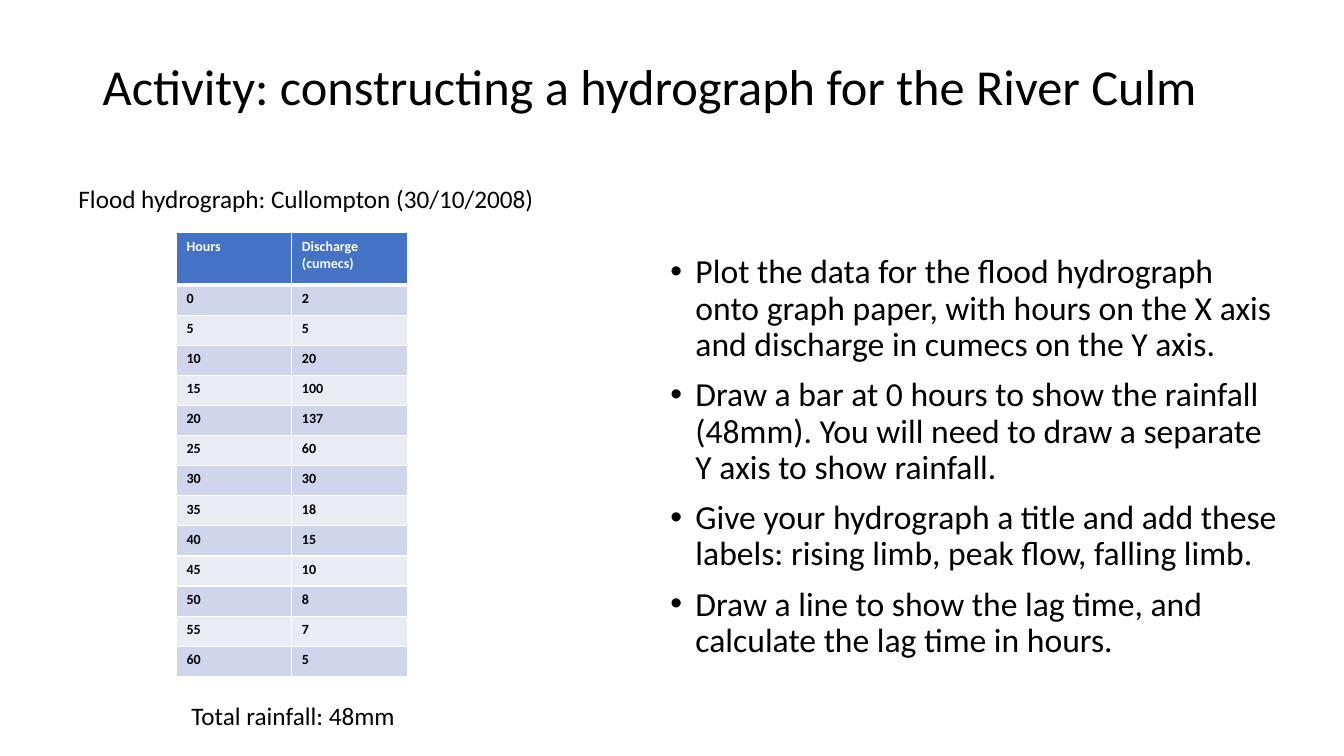
from typing import NamedTuple

from lxml.etree import SubElement
from pptx import Presentation
from pptx.dml.color import RGBColor
from pptx.enum.text import MSO_ANCHOR
from pptx.oxml.ns import qn
from pptx.util import Inches, Pt

FONT = "Calibri"
BLACK, WHITE = "000000", "FFFFFF"
HEADER_BLUE = "4472C4"
BANDS = ("CFD5EA", "E9EBF5")


class Box(NamedTuple):
    left: float
    top: float
    width: float
    height: float


class Reading(NamedTuple):
    hours: int
    discharge: int


DISCHARGES = (2, 5, 20, 100, 137, 60, 30, 18, 15, 10, 8, 7, 5)
READINGS = [Reading(5 * step, flow) for step, flow in enumerate(DISCHARGES)]
TASKS = [
    "Plot the data for the flood hydrograph onto graph paper, with hours on the X axis "
    "and discharge in cumecs on the Y axis.",
    "Draw a bar at 0 hours to show the rainfall (48mm). You will need to draw a separate "
    "Y axis to show rainfall.",
    "Give your hydrograph a title and add these labels: rising limb, peak flow, falling limb.",
    "Draw a line to show the lag time, and calculate the lag time in hours.",
]


def rgb(color: str) -> RGBColor:
    return RGBColor.from_string(color)


def place(box: Box) -> list:
    return [Inches(length) for length in box]


def write(frame, *lines: str, size: float, color: str = BLACK, bold: bool = False,
          bullet: bool = False, line_spacing: float = 1.0, space_before: float = 0) -> None:
    for index, line in enumerate(lines):
        paragraph = frame.add_paragraph() if index else frame.paragraphs[0]
        if bullet:
            properties = paragraph._p.get_or_add_pPr()
            properties.set("marL", str(Inches(0.25)))
            properties.set("indent", str(-Inches(0.25)))
            SubElement(properties, qn("a:buFont"), typeface="Arial")
            SubElement(properties, qn("a:buChar"), char="•")
        paragraph.line_spacing = line_spacing
        paragraph.space_before = Pt(space_before if index else 0)
        run = paragraph.add_run()
        run.text = line
        run.font.name, run.font.size, run.font.bold = FONT, Pt(size), bold
        run.font.color.rgb = rgb(color)


def add_text(slide, box: Box, *lines: str, wrap: bool = True,
             anchor: MSO_ANCHOR = MSO_ANCHOR.TOP, **text_format) -> None:
    frame = slide.shapes.add_textbox(*place(box)).text_frame
    frame.word_wrap = wrap
    frame.vertical_anchor = anchor
    write(frame, *lines, **text_format)


def add_borders(cell, top: float, bottom: float) -> None:
    properties = cell._tc.get_or_add_tcPr()
    for side, width in (("L", 1), ("R", 1), ("T", top), ("B", bottom)):
        line = SubElement(properties, qn(f"a:ln{side}"), w=str(Pt(width)))
        SubElement(SubElement(line, qn("a:solidFill")), qn("a:srgbClr"), val=WHITE)


def add_readings_table(slide, box: Box, header_height: float) -> None:
    rows = [("Hours", "Discharge (cumecs)"), *READINGS]
    table = slide.shapes.add_table(len(rows), 2, *place(box)).table
    reading_height = (box.height - header_height) / len(READINGS)
    for row_index, values in enumerate(rows):
        is_header = row_index == 0
        table.rows[row_index].height = Inches(header_height if is_header else reading_height)
        for column_index, value in enumerate(values):
            cell = table.cell(row_index, column_index)
            add_borders(cell, top=3 if row_index == 1 else 1, bottom=3 if is_header else 1)
            cell.fill.solid()
            cell.fill.fore_color.rgb = rgb(HEADER_BLUE if is_header else BANDS[(row_index - 1) % 2])
            write(cell.text_frame, str(value), size=10, bold=True,
                  color=WHITE if is_header else BLACK)


def main() -> None:
    presentation = Presentation()
    presentation.slide_width, presentation.slide_height = Inches(13.33), Inches(7.5)
    slide = presentation.slides.add_slide(presentation.slide_layouts[6])

    # Title
    add_text(slide, Box(0.92, 0.4, 11.5, 0.97),
             "Activity: constructing a hydrograph for the River Culm",
             size=36, line_spacing=0.9, anchor=MSO_ANCHOR.MIDDLE)

    # Tasks
    add_text(slide, Box(6.55, 2.48, 6.26, 3.75), *TASKS,
             size=24, bullet=True, line_spacing=0.9, space_before=10)

    # Flood readings with caption and rainfall total
    add_readings_table(slide, Box(1.75, 2.31, 2.29, 4.4), header_height=0.52)
    add_text(slide, Box(0.68, 1.77, 4.77, 0.4),
             "Flood hydrograph: Cullompton (30/10/2008)", size=18, wrap=False)
    add_text(slide, Box(1.8, 6.9, 2.24, 0.4), "Total rainfall: 48mm", size=18, wrap=False)

    presentation.save("out.pptx")


if __name__ == "__main__":
    main()
